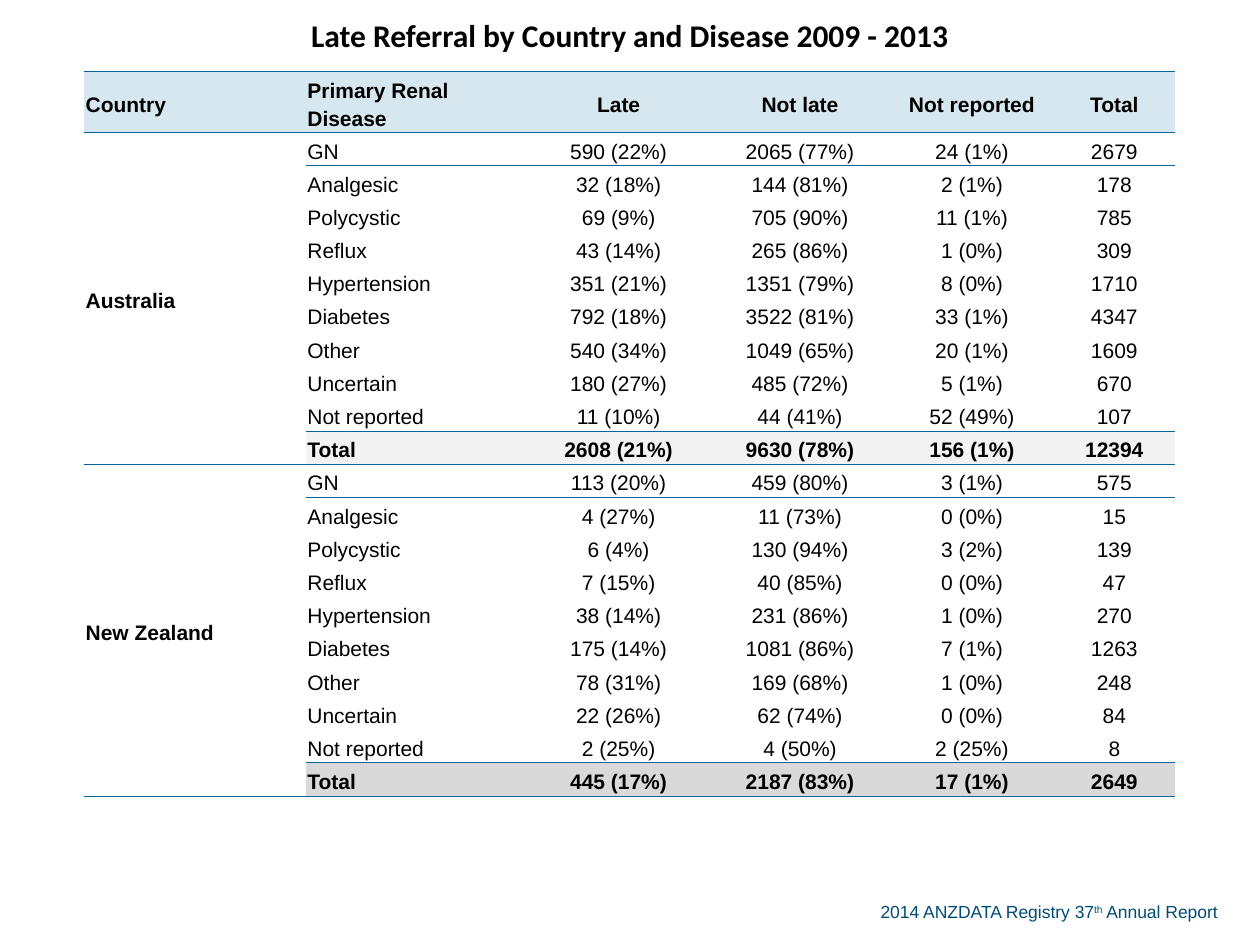
"""Build the slide tabulating late referral by country and primary renal disease."""
from lxml.etree import SubElement
from pptx import Presentation
from pptx.dml.color import RGBColor
from pptx.enum.text import MSO_ANCHOR, PP_ALIGN
from pptx.oxml.ns import qn
from pptx.util import Inches, Pt

TITLE = "Late Referral by Country and Disease 2009 - 2013"
HEADERS = ["Country", "Primary Renal Disease", "Late", "Not late", "Not reported", "Total"]
DISEASES = ["GN", "Analgesic", "Polycystic", "Reflux", "Hypertension", "Diabetes",
            "Other", "Uncertain", "Not reported", "Total"]
COUNTRIES = {
    "Australia": [
        ("590 (22%)", "2065 (77%)", "24 (1%)", "2679"),
        ("32 (18%)", "144 (81%)", "2 (1%)", "178"),
        ("69 (9%)", "705 (90%)", "11 (1%)", "785"),
        ("43 (14%)", "265 (86%)", "1 (0%)", "309"),
        ("351 (21%)", "1351 (79%)", "8 (0%)", "1710"),
        ("792 (18%)", "3522 (81%)", "33 (1%)", "4347"),
        ("540 (34%)", "1049 (65%)", "20 (1%)", "1609"),
        ("180 (27%)", "485 (72%)", "5 (1%)", "670"),
        ("11 (10%)", "44 (41%)", "52 (49%)", "107"),
        ("2608 (21%)", "9630 (78%)", "156 (1%)", "12394"),
    ],
    "New Zealand": [
        ("113 (20%)", "459 (80%)", "3 (1%)", "575"),
        ("4 (27%)", "11 (73%)", "0 (0%)", "15"),
        ("6 (4%)", "130 (94%)", "3 (2%)", "139"),
        ("7 (15%)", "40 (85%)", "0 (0%)", "47"),
        ("38 (14%)", "231 (86%)", "1 (0%)", "270"),
        ("175 (14%)", "1081 (86%)", "7 (1%)", "1263"),
        ("78 (31%)", "169 (68%)", "1 (0%)", "248"),
        ("22 (26%)", "62 (74%)", "0 (0%)", "84"),
        ("2 (25%)", "4 (50%)", "2 (25%)", "8"),
        ("445 (17%)", "2187 (83%)", "17 (1%)", "2649"),
    ],
}
COLUMN_WIDTHS = [1.76, 1.76, 1.44, 1.44, 1.29, 0.97]
TITLE_HEIGHT, HEADER_HEIGHT, TABLE_HEIGHT = 0.57, 0.48, 6.32
ROW_FILLS = {1: "D7E7EF", 11: "F3F3F3", 21: "D9D9D9"}
FULL_RULES = {1, 2, 12, 22}
TOTAL_RULES = {11, 21}
NO_STYLE = "{2D5ABB26-0587-4C30-8999-92F81FD0307C}"


def set_font(font, color, **values):
    font.color.rgb = RGBColor.from_string(color)
    for name, value in values.items():
        setattr(font, name, value)


def add_border(cell, side, color="006699", width=Pt(0.5)):
    line = SubElement(cell._tc.get_or_add_tcPr(), qn(f"a:{side}"), w=str(width))
    fill = SubElement(line, qn("a:solidFill"))
    SubElement(fill, qn("a:srgbClr"), val=color)


presentation = Presentation()
presentation.slide_width, presentation.slide_height = Inches(10), Inches(7.5)
slide = presentation.slides.add_slide(presentation.slide_layouts[6])

rows = [[TITLE] + [""] * 5, HEADERS]
for country, figures in COUNTRIES.items():
    for index, (disease, values) in enumerate(zip(DISEASES, figures)):
        rows.append([country if index == 0 else "", disease, *values])

table_width = sum(COLUMN_WIDTHS)
shape = slide.shapes.add_table(
    len(rows), len(HEADERS), Inches((10 - table_width) / 2), 0,
    Inches(table_width), Inches(TABLE_HEIGHT))
table = shape.table
table.first_row = table.horz_banding = False
table._tbl.tblPr.find(qn("a:tableStyleId")).text = NO_STYLE

body_height = (TABLE_HEIGHT - TITLE_HEIGHT - HEADER_HEIGHT) / (len(rows) - 2)
for column, width in zip(table.columns, COLUMN_WIDTHS):
    column.width = Inches(width)
for row, height in zip(table.rows, [TITLE_HEIGHT, HEADER_HEIGHT] + [body_height] * 20):
    row.height = Inches(height)

table.cell(0, 0).merge(table.cell(0, 5))
for first_row in (2, 12):
    table.cell(first_row, 0).merge(table.cell(first_row + 9, 0))

cell_format = {
    "margin_left": Inches(0.01), "margin_right": Inches(0.01),
    "margin_top": Inches(0.01), "margin_bottom": 0,
    "vertical_anchor": MSO_ANCHOR.MIDDLE,
}
body_format = {"line_spacing": 1.19, "space_after": Pt(14)}
for row_index, texts in enumerate(rows):
    for column_index, text in enumerate(texts):
        cell = table.cell(row_index, column_index)
        for name, value in cell_format.items():
            setattr(cell, name, value)

        rules = FULL_RULES | TOTAL_RULES if column_index else FULL_RULES
        if row_index in rules:
            add_border(cell, "lnT")
        if row_index + cell.span_height in rules:
            add_border(cell, "lnB")
        if row_index in ROW_FILLS and (column_index or row_index == 1):
            cell.fill.solid()
            cell.fill.fore_color.rgb = RGBColor.from_string(ROW_FILLS[row_index])
        else:
            cell.fill.background()

        if not text:
            continue
        is_title = row_index == 0
        paragraph = cell.text_frame.paragraphs[0]
        paragraph.alignment = PP_ALIGN.CENTER if is_title or column_index > 1 else PP_ALIGN.LEFT
        if not is_title:
            for name, value in body_format.items():
                setattr(paragraph, name, value)
        run = paragraph.add_run()
        run.text = text
        set_font(run.font, "000000", name="Calibri" if is_title else "Arial",
                 size=Pt(18 if is_title else 12),
                 bold=is_title or column_index == 0 or row_index in ROW_FILLS)

footer = slide.shapes.add_textbox(Inches(6.89), Inches(7.1), Inches(2.99), Inches(0.27))
footer.text_frame.word_wrap = True
paragraph = footer.text_frame.paragraphs[0]
for text, baseline in [("2014 ANZDATA Registry 37", 0), ("th", 30000), (" Annual Report", 0)]:
    run = paragraph.add_run()
    run.text = text
    set_font(run.font, "004D73", name="Arial", size=Pt(10))
    if baseline:
        run._r.get_or_add_rPr().set("baseline", str(baseline))

presentation.save("out.pptx")
